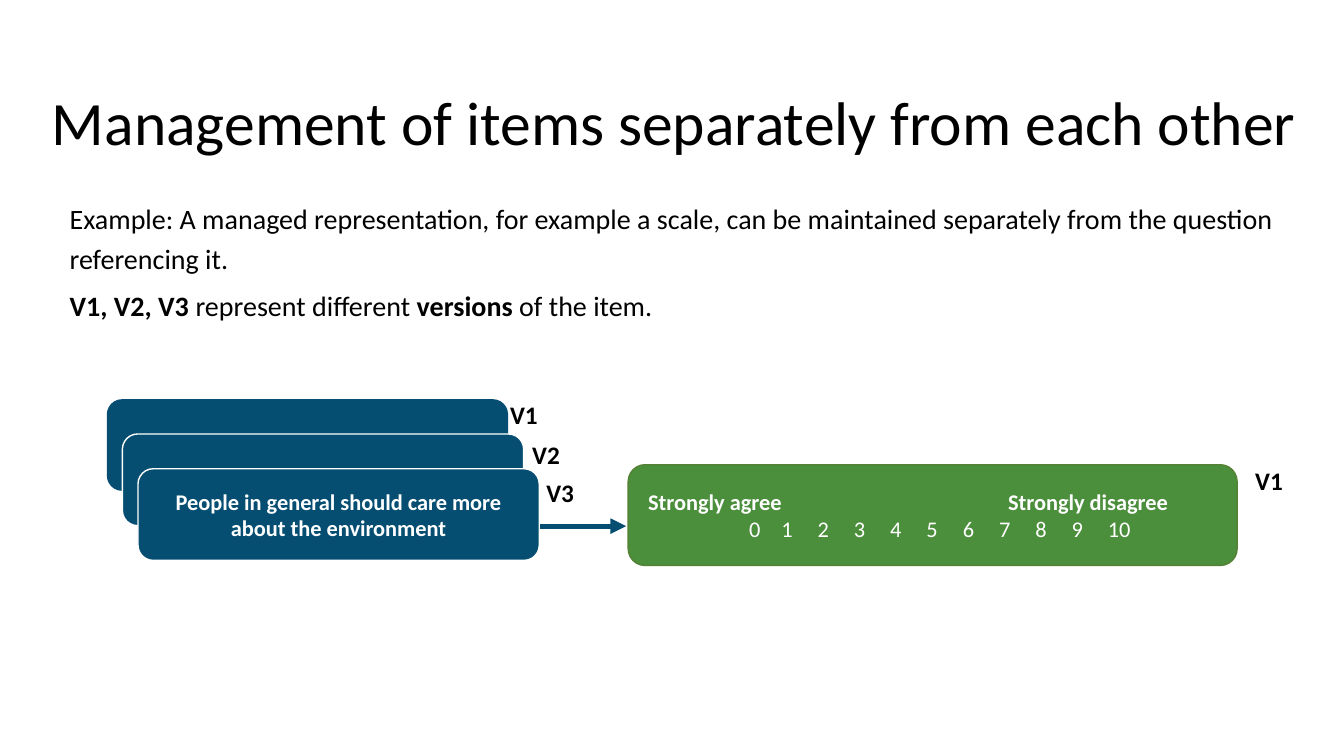
from typing import NamedTuple

from lxml import etree
from pptx import Presentation
from pptx import util as u
from pptx.dml.color import RGBColor
from pptx.enum import shapes, text
from pptx.oxml.ns import qn

BLUE, GREEN, DARK_GREEN = "054E72", "4B8E3C", "548235"
WHITE, BLACK = "FFFFFF", "000000"

prs = Presentation()
prs.slide_width, prs.slide_height = u.Inches(13.33), u.Inches(7.5)
s = prs.slides.add_slide(prs.slide_layouts[6])


class Box(NamedTuple):
    """Position and size in percent of the slide."""
    x: float
    y: float
    w: float
    h: float


class Version(NamedTuple):
    name: str
    x: float
    y: float


def across(share: float) -> int:
    return round(prs.slide_width * share / 100)


def down(share: float) -> int:
    return round(prs.slide_height * share / 100)


def place(box: Box) -> tuple[int, int, int, int]:
    return across(box.x), down(box.y), across(box.w), down(box.h)


def rgb(color: str) -> RGBColor:
    return RGBColor.from_string(color)


def write(sp, *lines, size=18, color=BLACK, bold=False, align=text.PP_ALIGN.LEFT,
          anchor=text.MSO_ANCHOR.TOP, spacing=None, before=None, wrap=True) -> list:
    """Fill a shape; each line is a string or a list of (string, bold) runs."""
    tf = sp.text_frame
    tf.word_wrap, tf.vertical_anchor = wrap, anchor
    for i, line in enumerate(lines):
        p = tf.paragraphs[0] if i == 0 else tf.add_paragraph()
        p.alignment, p.line_spacing = align, spacing
        if before is not None:
            p.space_before = u.Pt(before)
        for words, heavy in [(line, bold)] if isinstance(line, str) else line:
            r = p.add_run()
            r.text = words
            r.font.name, r.font.size, r.font.bold = "Calibri", u.Pt(size), heavy
            r.font.color.rgb = rgb(color)
    return list(tf.paragraphs)


def textbox(box: Box):
    return s.shapes.add_textbox(*place(box))


def card(box: Box, fill: str, line: str | None):
    sp = s.shapes.add_shape(shapes.MSO_SHAPE.ROUNDED_RECTANGLE, *place(box))
    sp.shadow.inherit = False
    sp.fill.solid()
    sp.fill.fore_color.rgb = rgb(fill)
    if line:
        sp.line.color.rgb = rgb(line)
        sp.line.width = u.Pt(1)
    else:
        sp.line.fill.background()
    return sp


def arrow(x1: float, x2: float, y: float, color: str, width: float) -> None:
    c = s.shapes.add_connector(shapes.MSO_CONNECTOR.STRAIGHT,
                               across(x1), down(y), across(x2), down(y))
    c.line.color.rgb = rgb(color)
    c.line.width = u.Pt(width)
    etree.SubElement(c.line._get_or_add_ln(), qn("a:tailEnd"), type="triangle")
    etree.SubElement(c._element.spPr, qn("a:effectLst"))


def set_tabs(p, stops: list[float]) -> None:
    """Add left tab stops, in inches from the text edge."""
    tabs = etree.SubElement(p._p.get_or_add_pPr(), qn("a:tabLst"))
    for stop in stops:
        etree.SubElement(tabs, qn("a:tab"), pos=str(u.Inches(stop)), algn="l")


write(textbox(Box(0.68, 3.33, 99.02, 19.33)),
      "Management of items separately from each other", size=44, spacing=1.6,
      align=text.PP_ALIGN.CENTER, anchor=text.MSO_ANCHOR.MIDDLE)

body = textbox(Box(0.68, 20.13, 97.9, 63.47))
body.text_frame.margin_left, body.text_frame.margin_top = u.Inches(0.6), u.Inches(0.42)
write(body,
      "Example: A managed representation, for example a scale, can be maintained "
      "separately from the question referencing it.",
      [("V1, V2, V3 ", True), ("represent different ", False),
       ("versions ", True), ("of the item.", False)],
      size=20, spacing=1.2, before=5)

arrow(36.76, 46.59, 69.6, BLUE, 3.75)

question = None
for i in range(3):
    question = card(Box(7.95 + 1.16 * i, 52.8 + 4.6 * i, 29.86, 12.13),
                    BLUE, WHITE if i else None)
write(question, "People in general should care more about the environment", size=16,
      color=WHITE, bold=True, align=text.PP_ALIGN.CENTER, anchor=text.MSO_ANCHOR.MIDDLE)

scale = card(Box(46.74, 61.47, 45.31, 13.33), GREEN, DARK_GREEN)
scale.text_frame.margin_left = u.Inches(0.15)
ends, points = write(
    scale, "Strongly agree\tStrongly disagree",
    [("".join(f"\t{n}" for n in range(11)), False)],
    size=16, color=WHITE, bold=True, anchor=text.MSO_ANCHOR.MIDDLE)
set_tabs(ends, [3.57])
set_tabs(points, [1.0] + [1.32 + 0.36 * i for i in range(10)])

for version in (Version("V1", 37.21, 52.13), Version("V2", 38.86, 57.47),
                Version("V3", 39.91, 62.53), Version("V1", 92.65, 60.93)):
    write(textbox(Box(version.x, version.y, 3.6, 5.33)), version.name,
          bold=True, wrap=False)

prs.save("out.pptx")
